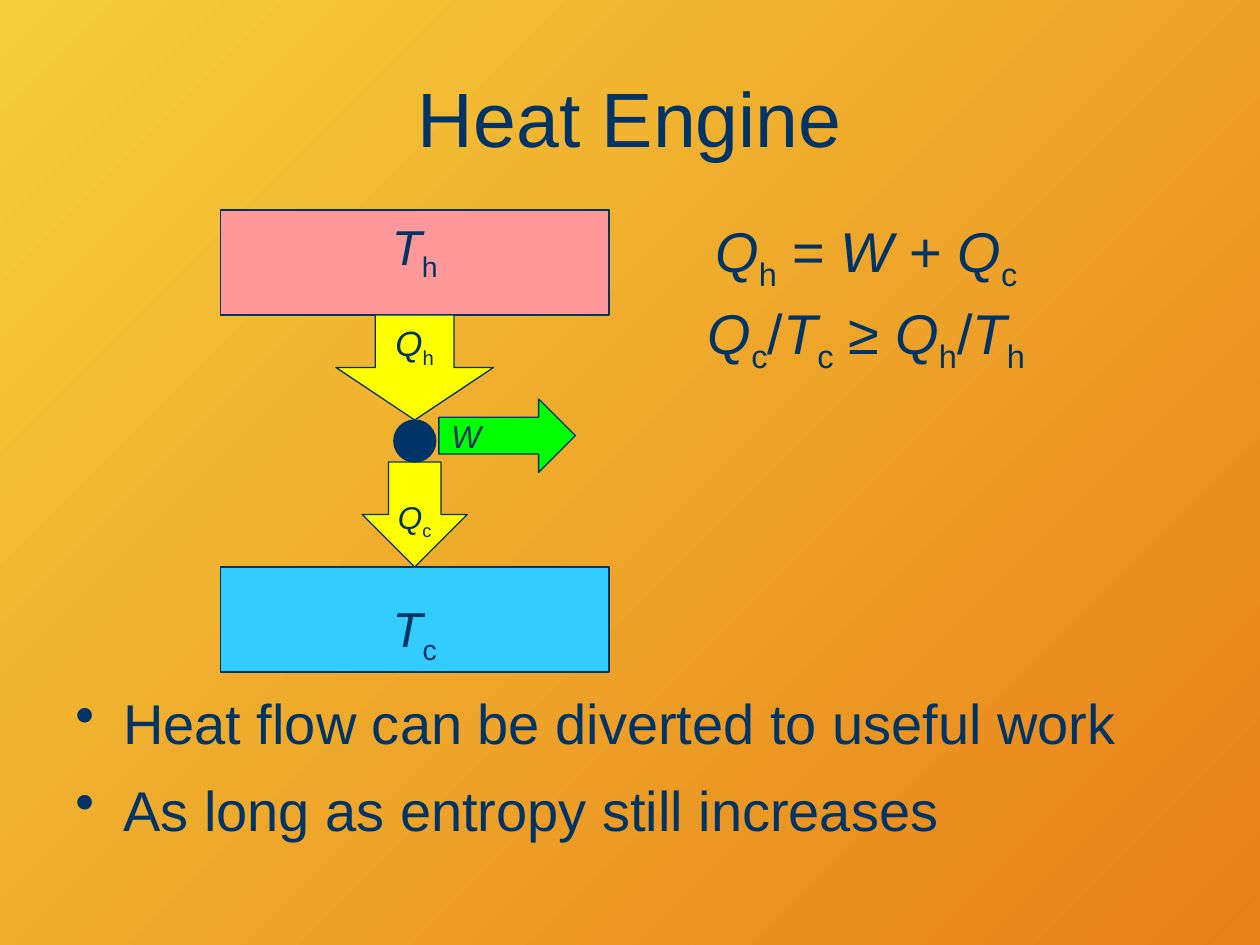
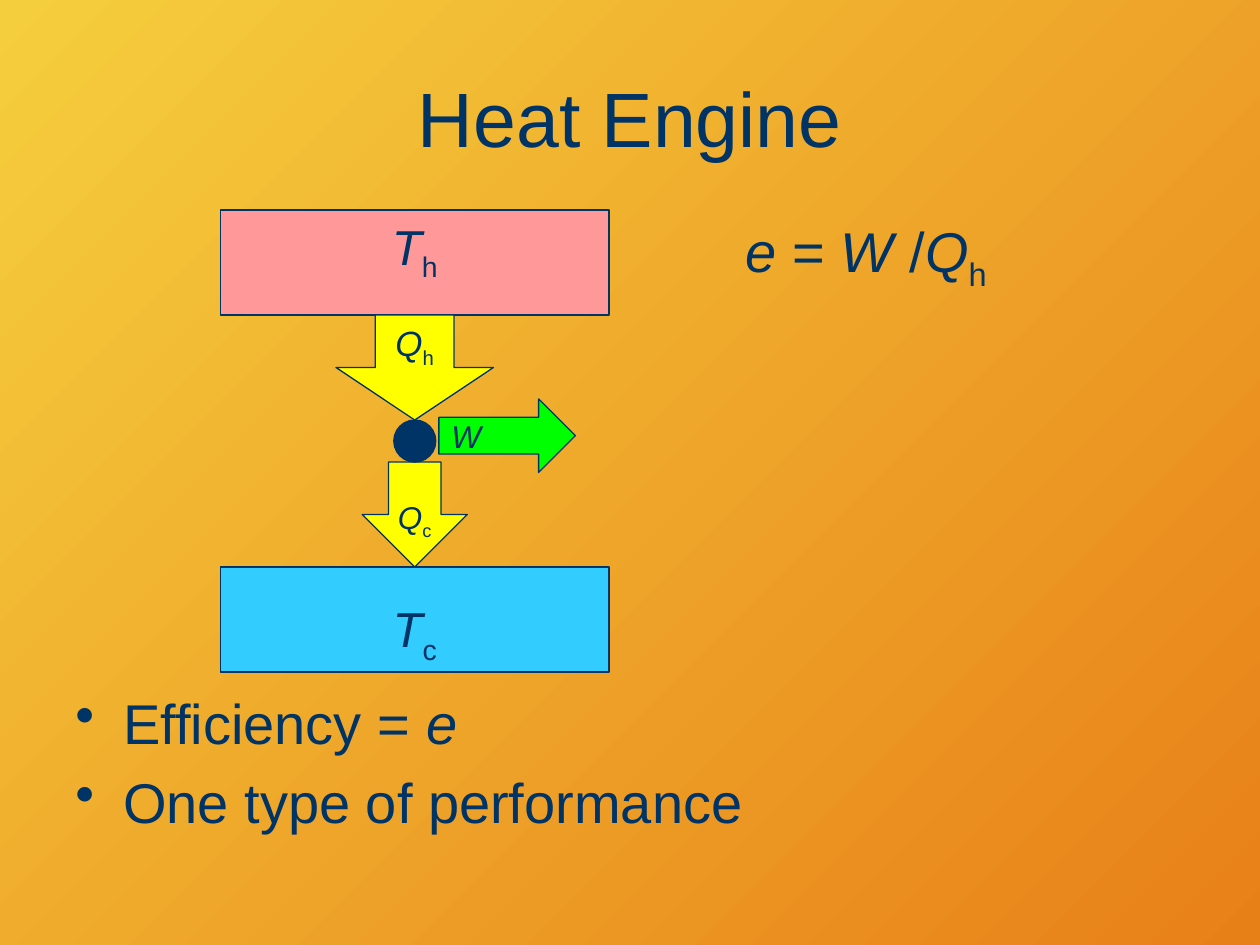
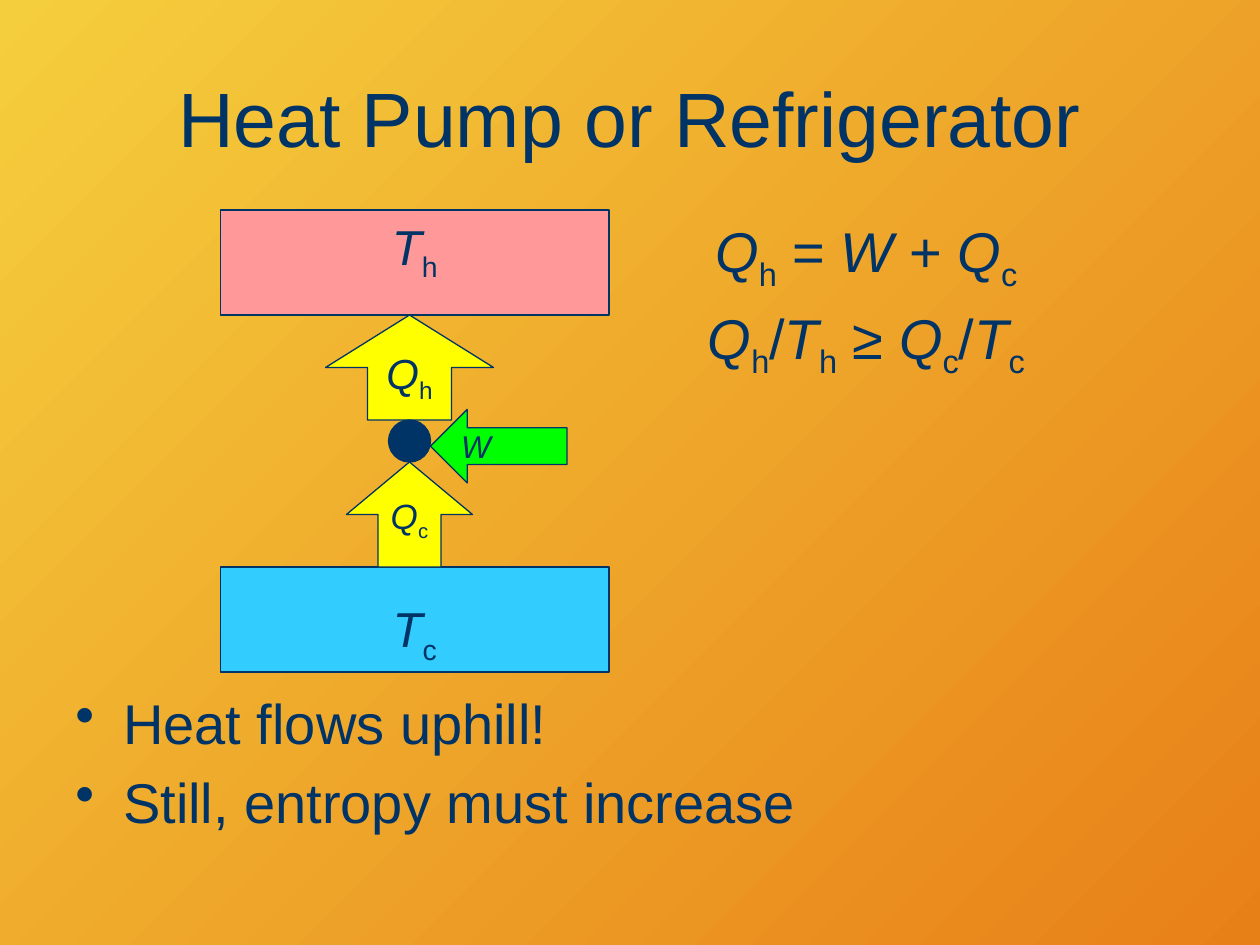
from pptx import Presentation
from pptx.dml.color import RGBColor
from pptx.enum.shapes import MSO_SHAPE as Shape
from pptx.enum.text import MSO_ANCHOR as Anchor, PP_ALIGN as Align
from pptx.oxml.ns import qn
from pptx.util import Inches, Pt
from lxml.etree import SubElement

NAVY = RGBColor(0x00, 0x33, 0x66)
GOLD = RGBColor(0xF5, 0xCE, 0x3D)
ORANGE = RGBColor(0xE8, 0x80, 0x18)
HOT = RGBColor(0xFF, 0x99, 0x99)
COLD = RGBColor(0x33, 0xCC, 0xFF)
HEAT = RGBColor(0xFF, 0xFF, 0x00)
WORK = RGBColor(0x00, 0xFF, 0x00)

FONT = "Arial"
CELL = Inches(1) / 12  # the slide is a grid of 120 columns by 90 rows
COLUMNS, ROWS = 120, 90
MARGIN, FULL_WIDTH = 6, 108
BODY_TOP = 65

# Markup: "|" parts the runs, "*" opens an italic run, "_" a subscript
FIRST_LAW = "*Q|_h| = |*W| + |*Q|_c"
ENGINE_ENTROPY = "*Q|_c|/|*T|_c| ≥ |*Q|_h|/|*T|_h"
PUMP_ENTROPY = "*Q|_h|/|*T|_h| ≥ |*Q|_c|/|*T|_c"


def cells(*lengths):
    return [round(length * CELL) for length in lengths]


def indent(paragraph, bullet):
    """Hanging indent, space before in percent, and an optional bullet."""
    props = paragraph._p.get_or_add_pPr()
    props.set("marL", str(Inches(0.38)))
    props.set("indent", str(-Inches(0.38)))
    before = SubElement(props, qn("a:spcBef"))
    SubElement(before, qn("a:spcPct")).set("val", "20000")
    if bullet:
        SubElement(props, qn("a:buChar")).set("char", "•")
    else:
        SubElement(props, qn("a:buNone"))


def write(shape, *lines, size, align=Align.CENTER, anchor=Anchor.TOP,
          insets=(0.1, 0.05), hanging=False, bullet=False):
    frame = shape.text_frame
    frame.word_wrap = True
    frame.vertical_anchor = anchor
    frame.margin_left = frame.margin_right = Inches(insets[0])
    frame.margin_top = frame.margin_bottom = Inches(insets[1])
    for number, line in enumerate(lines):
        paragraph = frame.add_paragraph() if number else frame.paragraphs[0]
        paragraph.alignment = align
        if hanging:
            indent(paragraph, bullet)
        for part in line.split("|"):
            run = paragraph.add_run()
            run.text = part.lstrip("*_")
            font = run.font
            font.name, font.size, font.color.rgb = FONT, Pt(size), NAVY
            font.italic = part.startswith("*")
            if part.startswith("_"):
                font._element.set("baseline", "-25000")


def add_text(slide, left, top, width, height, *lines, **style):
    box = slide.shapes.add_textbox(*cells(left, top, width, height))
    write(box, *lines, **style)


def add_part(slide, kind, left, top, width, height, color, label=None, **style):
    part = slide.shapes.add_shape(kind, *cells(left, top, width, height))
    part.shadow.inherit = False
    part.fill.solid()
    part.fill.fore_color.rgb = color
    part.line.color.rgb = NAVY
    part.line.width = Pt(0.75)
    if label:
        write(part, label, **style)


def add_title(slide, title):
    add_text(slide, MARGIN, 3.6, FULL_WIDTH, 15, title, size=44, anchor=Anchor.MIDDLE)


def add_bullets(slide, top, height, *lines):
    add_text(slide, MARGIN, top, FULL_WIDTH, height, *lines,
             size=32, align=Align.LEFT, hanging=True, bullet=True)


def add_formulas(slide, top, height, *lines):
    add_text(slide, 63, top, 39, height, *lines, size=32, hanging=True)


def add_reservoirs(slide):
    add_part(slide, Shape.RECTANGLE, 21, 20, 37, 10, HOT, "*T|_h", size=28)
    add_part(slide, Shape.RECTANGLE, 21, 54, 37, 10, COLD, "*T|_c", size=28,
             anchor=Anchor.BOTTOM)


def add_flows(slide, axis, heat_arrow, hot, cold, work_arrow, work_at):
    """Heat arrows and the device centred on one axis, with work at its side."""
    for symbol, top, (width, style) in (("*Q|_h", 30, hot), ("*Q|_c", 44, cold)):
        add_part(slide, heat_arrow, axis - width / 2, top, width, 10, HEAT,
                 symbol, **style)
    add_part(slide, work_arrow, *work_at, 13, 7, WORK, "*W", size=18,
             align=Align.LEFT, anchor=Anchor.MIDDLE)
    add_part(slide, Shape.OVAL, axis - 2, 40, 4, 4, NAVY)


def add_engine(slide):
    add_reservoirs(slide)
    add_flows(slide, 39.5, Shape.DOWN_ARROW,
              hot=(15, dict(size=20)),
              cold=(10, dict(size=18, anchor=Anchor.BOTTOM, insets=(0, 0))),
              work_arrow=Shape.RIGHT_ARROW, work_at=(41.8, 38))


def add_pump(slide):
    add_reservoirs(slide)
    add_flows(slide, 39, Shape.UP_ARROW,
              hot=(16, dict(size=24)),
              cold=(12, dict(size=20, insets=(0, 0.05))),
              work_arrow=Shape.LEFT_ARROW, work_at=(41, 39))


def paint_background(master):
    fill = master.background.fill
    fill.gradient()
    fill.gradient_angle = 315
    for stop, color, position in zip(fill.gradient_stops, (GOLD, ORANGE), (0, 1)):
        stop.color.rgb = color
        stop.position = position


def main():
    prs = Presentation()
    prs.slide_width, prs.slide_height = cells(COLUMNS, ROWS)
    paint_background(prs.slide_master)
    blank = prs.slide_layouts[6]

    # Heat engine: energy and entropy balance
    balance = prs.slides.add_slide(blank)
    add_title(balance, "Heat Engine")
    add_engine(balance)
    add_formulas(balance, 20, 7.8, FIRST_LAW)
    add_formulas(balance, 27.8, 8.2, ENGINE_ENTROPY)
    add_bullets(balance, BODY_TOP, 8.3, "Heat flow can be diverted to useful work")
    add_bullets(balance, 73.3, 7.7, "As long as entropy still increases")

    # Heat engine: efficiency
    efficiency = prs.slides.add_slide(blank)
    add_title(efficiency, "Heat Engine")
    add_engine(efficiency)
    add_formulas(efficiency, 20, 16, "*e |= |*W| /|*Q|_h")
    add_bullets(efficiency, BODY_TOP, 15.4, "Efficiency = |*e", "One type of performance")

    # Heat pump
    pump = prs.slides.add_slide(blank)
    add_title(pump, "Heat Pump or Refrigerator")
    add_pump(pump)
    add_formulas(pump, 20, 15.4, FIRST_LAW, PUMP_ENTROPY)
    add_bullets(pump, BODY_TOP, 15.4, "Heat flows uphill!", "Still, entropy must increase")

    prs.save("out.pptx")


if __name__ == "__main__":
    main()
